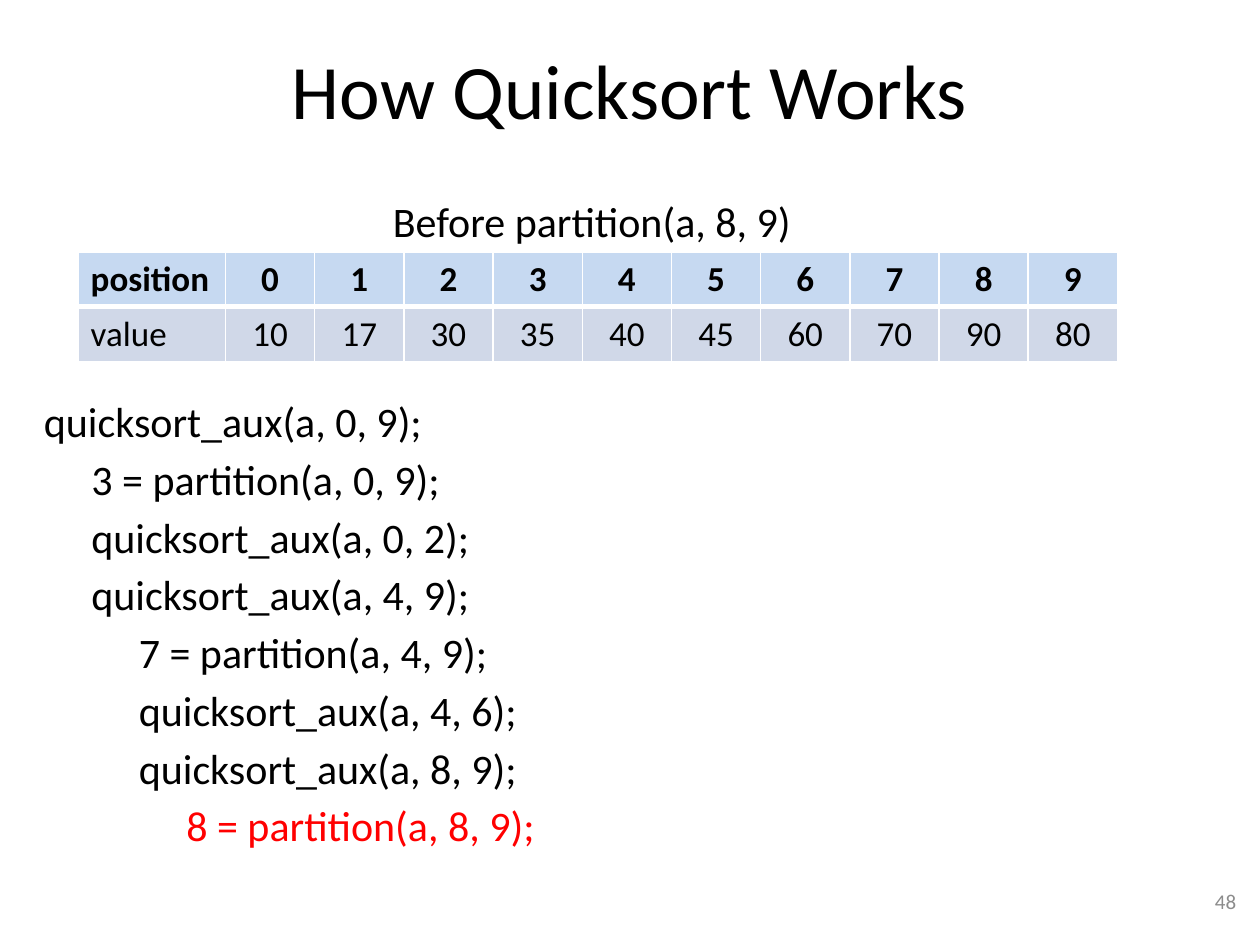
"""Build the slide showing the array before partition(a, 8, 9)."""
from dataclasses import dataclass

from lxml import etree
from pptx import Presentation
from pptx import util as u
from pptx.dml.color import RGBColor
from pptx.enum import text
from pptx.oxml.ns import qn

COLUMNS, ROWS = 100, 75
FONT = "Calibri"
BLACK = RGBColor(0x00, 0x00, 0x00)
RED = RGBColor(0xFF, 0x00, 0x00)
GREY = RGBColor(0x8C, 0x8C, 0x8C)
WHITE = RGBColor(0xFF, 0xFF, 0xFF)
HEADER_BLUE = RGBColor(0xC6, 0xD9, 0xF1)
VALUE_BLUE = RGBColor(0xD0, 0xD8, 0xE8)
LEFT, CENTER, RIGHT = text.PP_ALIGN.LEFT, text.PP_ALIGN.CENTER, text.PP_ALIGN.RIGHT
TOP, MIDDLE = text.MSO_ANCHOR.TOP, text.MSO_ANCHOR.MIDDLE
INDENT = " " * 5

prs = Presentation()
prs.slide_width, prs.slide_height = u.Inches(10), u.Inches(7.5)


@dataclass(frozen=True)
class Line:
    """A line of text with its nesting level and colour."""
    words: str
    level: int = 0
    color: RGBColor = BLACK


@dataclass(frozen=True)
class TextBlock:
    """Lines of text placed on the slide grid."""
    left: float
    top: float
    width: float
    height: float
    lines: tuple[Line, ...]
    size: int = 24
    align: int = LEFT
    anchor: int = TOP
    wrap: bool = True


@dataclass(frozen=True)
class TableRow:
    """A labelled table row with its look."""
    label: str
    values: tuple[int, ...]
    fill: RGBColor
    bold: bool
    bottom_border: int


BLOCKS = (
    TextBlock(5, 0.8, 90, 12.5, (Line("How Quicksort Works"),), 44, CENTER, MIDDLE),
    TextBlock(2.5, 30.9, 90, 39.1, (
        Line("quicksort_aux(a, 0, 9);"),
        Line("3 = partition(a, 0, 9);", 1),
        Line("quicksort_aux(a, 0, 2);", 1),
        Line("quicksort_aux(a, 4, 9);", 1),
        Line("7 = partition(a, 4, 9);", 2),
        Line("quicksort_aux(a, 4, 6);", 2),
        Line("quicksort_aux(a, 8, 9);", 2),
        Line("8 = partition(a, 8, 9);", 3, RED),
    )),
    TextBlock(75.8, 69.5, 23.3, 4, (Line("48", color=GREY),), 12, RIGHT, MIDDLE),
    TextBlock(30.2, 15, 33.9, 5, (Line("Before partition(a, 8, 9)"),), wrap=False),
)
ARRAY_ROWS = (
    TableRow("position", tuple(range(10)), HEADER_BLUE, True, 3),
    TableRow("value", (10, 17, 30, 35, 40, 45, 60, 70, 90, 80), VALUE_BLUE, False, 1),
)


def x(columns: float) -> int:
    """Convert grid columns to a length."""
    return round(prs.slide_width * columns / COLUMNS)


def y(rows: float) -> int:
    """Convert grid rows to a length."""
    return round(prs.slide_height * rows / ROWS)


def style(p, size: int, color: RGBColor, align: int, bold: bool = False) -> None:
    """Align a paragraph and format its runs."""
    p.alignment = align
    for r in p.runs:
        r.font.name, r.font.size, r.font.bold = FONT, u.Pt(size), bold
        r.font.color.rgb = color


def draw_text(s, block: TextBlock) -> None:
    """Draw a block of text."""
    sp = s.shapes.add_textbox(x(block.left), y(block.top), x(block.width), y(block.height))
    tf = sp.text_frame
    tf.word_wrap, tf.vertical_anchor = block.wrap, block.anchor
    tf.text = "\n".join(INDENT * line.level + line.words for line in block.lines)
    for i, (p, line) in enumerate(zip(tf.paragraphs, block.lines)):
        style(p, block.size, line.color, block.align)
        if i:
            p.space_before = u.Pt(4.2)


def set_borders(cell, top: int, bottom: int) -> None:
    """Give a cell white borders of the given point widths."""
    tc_pr = cell._tc.get_or_add_tcPr()
    for side, width in (("L", 1), ("R", 1), ("T", top), ("B", bottom)):
        ln = etree.SubElement(tc_pr, qn(f"a:ln{side}"), w=str(u.Pt(width)))
        fill = etree.SubElement(ln, qn("a:solidFill"))
        etree.SubElement(fill, qn("a:srgbClr"), val=str(WHITE))


def draw_table(s, rows: tuple[TableRow, ...]) -> None:
    """Draw the array as a table of positions and values."""
    label_width, value_width, row_height = 11.7, 7.08, 4.35
    count = len(rows[0].values)
    frame = s.shapes.add_table(len(rows), count + 1, x(6.2), y(20),
                               x(label_width + count * value_width), y(len(rows) * row_height))
    table = frame.table
    for j, column in enumerate(table.columns):
        column.width = x(value_width if j else label_width)
    top_border = 1
    for i, row in enumerate(rows):
        table.rows[i].height = y(row_height)
        for j, content in enumerate((row.label, *row.values)):
            cell = table.cell(i, j)
            cell.text_frame.text = str(content)
            style(cell.text_frame.paragraphs[0], 20, BLACK, CENTER if j else LEFT, row.bold)
            set_borders(cell, top_border, row.bottom_border)
            cell.fill.solid()
            cell.fill.fore_color.rgb = row.fill
        top_border = row.bottom_border


def main() -> None:
    """Draw the slide and save it."""
    s = prs.slides.add_slide(prs.slide_layouts[6])
    for block in BLOCKS:
        draw_text(s, block)
    draw_table(s, ARRAY_ROWS)
    prs.save("out.pptx")


if __name__ == "__main__":
    main()
